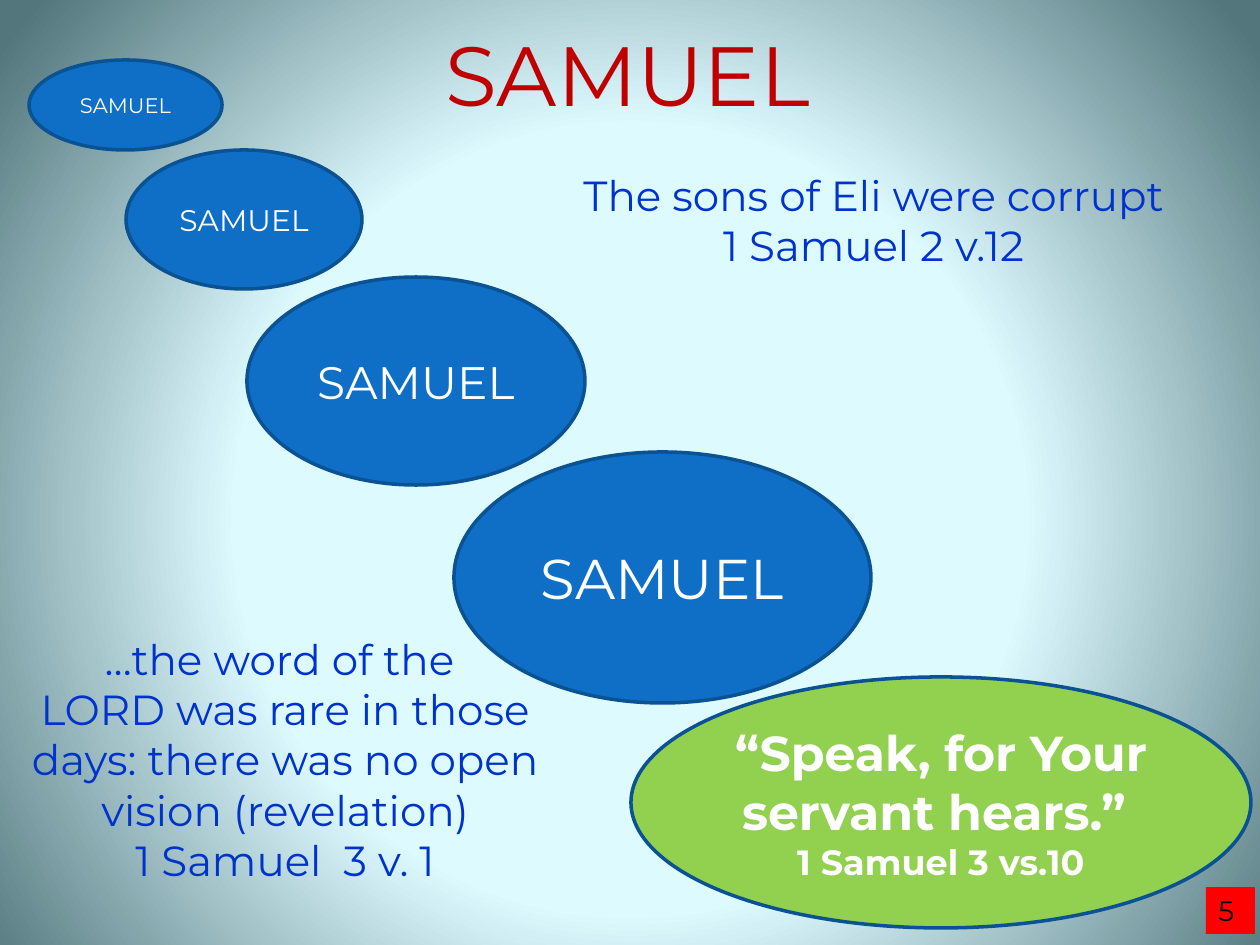
"""Build the Samuel slide: growing ovals, two verses and a page number."""
from pptx import Presentation
from pptx.dml.color import RGBColor
from pptx.enum.shapes import MSO_SHAPE as Preset
from pptx.enum.text import MSO_ANCHOR as Anchor, MSO_AUTO_SIZE as AutoSize, PP_ALIGN as Align
from pptx.oxml import parse_xml
from pptx.oxml.ns import nsdecls, qn
from pptx.util import Pt

PX = 914400 / 126


def color(hex_code):
    return RGBColor.from_string(hex_code)


def write(shape, box, lines, ink, anchor=Anchor.TOP, align=Align.CENTER, bold=False):
    for side, length in zip(("left", "top", "width", "height"), box):
        setattr(shape, side, round(length * PX))
    frame = shape.text_frame
    frame_format = {"word_wrap": True, "auto_size": AutoSize.NONE, "vertical_anchor": anchor}
    for key, value in frame_format.items():
        setattr(frame, key, value)
    frame.text = "\n".join(text for text, _ in lines)
    for paragraph, (_, size) in zip(frame.paragraphs, lines):
        paragraph.alignment = align
        font = paragraph.runs[0].font
        for key, value in {"name": "Montserrat", "size": Pt(size), "bold": bold}.items():
            setattr(font, key, value)
        font.color.rgb = color(ink)


deck = Presentation()
deck.slide_width, deck.slide_height = round(1260 * PX), round(945 * PX)
slide = deck.slides.add_slide(deck.slide_layouts[5])
shapes = slide.shapes

slide.background.fill.gradient()
linear = slide.element.find(".//" + qn("a:gradFill"))
stops = "".join(
    f'<a:gs pos="{percent * 1000}"><a:srgbClr val="{shade}"/></a:gs>'
    for percent, shade in [(0, "DEFBFF"), (50, "DDFAFF"), (100, "52767C")]
)
radial = parse_xml(
    f'<a:gradFill {nsdecls("a")} rotWithShape="1"><a:gsLst>{stops}</a:gsLst>'
    '<a:path path="circle"><a:fillToRect l="10000" t="110000" r="10000" b="100000"/></a:path>'
    "</a:gradFill>"
)
linear.getparent().replace(linear, radial)

write(shapes.title, (0, 16, 1255, 115), [("SAMUEL", 48)], "C00000")

answer = [("“Speak, for Your servant hears.” ", 28), ("1 Samuel 3 vs.10", 20)]
calls = [
    ((29, 60, 193, 90), "0F6FC6", [("SAMUEL", 12)], False),
    ((126, 150, 236, 139), "0F6FC6", [("SAMUEL", 17)], False),
    ((247, 277, 338, 208), "0F6FC6", [("SAMUEL", 26)], False),
    ((454, 452, 417, 251), "0F6FC6", [("SAMUEL", 32)], False),
    ((631, 677, 620, 251), "92D050", answer, True),
]
for box, fill, lines, bold in calls:
    call = shapes.add_shape(Preset.OVAL, 0, 0, 0, 0)
    call.shadow.inherit = False
    call.fill.solid()
    call.fill.fore_color.rgb = color(fill)
    call.line.color.rgb = color("0B5292")
    call.line.width = Pt(2)
    write(call, box, lines, "FFFFFF", Anchor.MIDDLE, bold=bold)

verses = [
    ((524, 163, 699, 115), ["The sons of Eli were corrupt", "1 Samuel 2 v.12"]),
    ((-25, 627, 620, 267), [
        "…the word of the ",
        "LORD was rare in those days: there was no open vision (revelation)",
        "1 Samuel  3 v. 1",
    ]),
]
for box, lines in verses:
    verse = shapes.add_textbox(0, 0, 0, 0)
    write(verse, box, [(line, 24) for line in lines], "0033CC")

page_number = shapes.add_shape(Preset.RECTANGLE, 0, 0, 0, 0)
page_number.shadow.inherit = False
page_number.fill.solid()
page_number.fill.fore_color.rgb = color("FF0000")
page_number.line.fill.background()
write(page_number, (1206, 887, 49, 47), [("5", 16)], "000000", align=Align.LEFT)

deck.save("out.pptx")
